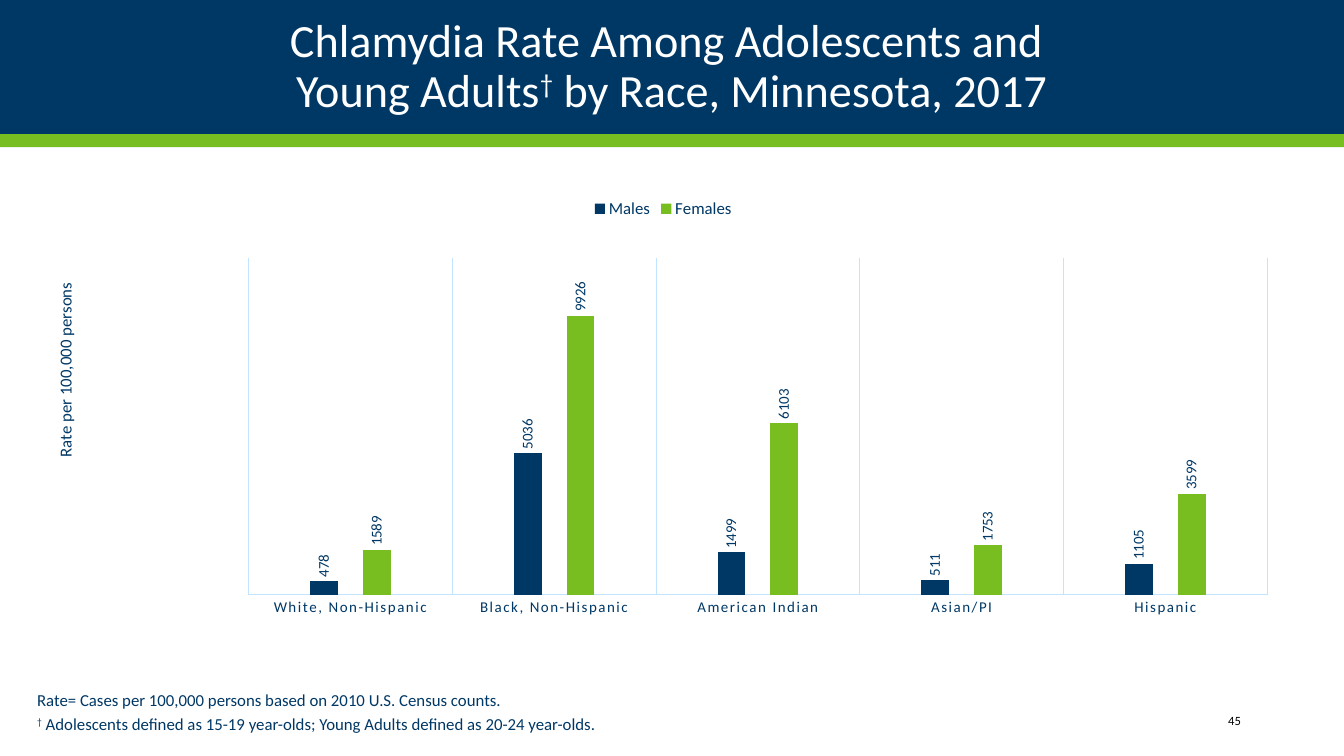
from lxml import etree
from pptx import Presentation
from pptx.chart.data import CategoryChartData
from pptx.dml.color import RGBColor
from pptx.enum.chart import XL_CHART_TYPE, XL_LABEL_POSITION, XL_LEGEND_POSITION, XL_TICK_MARK
from pptx.enum.shapes import MSO_SHAPE
from pptx.enum.text import MSO_ANCHOR, PP_ALIGN
from pptx.oxml.ns import qn
from pptx.util import Inches, Pt

NAVY, GREEN, PALE = "003865", "78BE21", "C2E4FF"
W, H = 40 / 3, 7.5
LABEL_SIZE = 10.64


def style(font, size, color):
    font.name, font.size = "Calibri", Pt(size)
    font.color.rgb = RGBColor.from_string(color)


def add_text(lines, at, size, color=NAVY, align=PP_ALIGN.LEFT, anchor=MSO_ANCHOR.TOP,
             spacing=1.0, before=0, inset=0.05):
    """Add one paragraph per line; every † is raised; before is a percentage of the line."""
    tf = slide.shapes.add_textbox(*map(Inches, at)).text_frame
    tf.word_wrap, tf.vertical_anchor = True, anchor
    tf.margin_top = tf.margin_bottom = Inches(inset)
    for i, line in enumerate(lines):
        p = tf.paragraphs[0] if i == 0 else tf.add_paragraph()
        p.alignment, p.line_spacing, p.space_before = align, spacing, Pt(0)
        gap = p._p.pPr.find(qn("a:spcBef"))
        gap.remove(gap[0])
        etree.SubElement(gap, qn("a:spcPct")).set("val", str(before * 1000))
        for j, row in enumerate(line.split("\n")):
            if j:
                p.add_line_break()
            for part in row.replace("†", "|†|").split("|"):
                if part:
                    r = p.add_run()
                    r.text = part
                    style(r.font, size, color)
                    if part == "†":
                        r.font._element.set("baseline", "30000")


prs = Presentation()
prs.slide_width, prs.slide_height = Inches(W), Inches(H)
slide = prs.slides.add_slide(prs.slide_layouts[6])

# Header bands and title
for top, height, color in [(0, 1.33, NAVY), (1.33, 0.13, GREEN)]:
    sp = slide.shapes.add_shape(MSO_SHAPE.RECTANGLE, 0, Inches(top), prs.slide_width, Inches(height))
    sp.shadow.inherit = False
    sp.fill.solid()
    sp.fill.fore_color.rgb = RGBColor.from_string(color)
    sp.line.fill.background()
add_text(["Chlamydia Rate Among Adolescents and \nYoung Adults† by Race, Minnesota, 2017"],
         (0.915, 0.17, 11.5, 1), 33, "FFFFFF", PP_ALIGN.CENTER, MSO_ANCHOR.MIDDLE, spacing=0.9)

# Chart
data = CategoryChartData()
data.categories = ["White, Non-Hispanic", "Black, Non-Hispanic", "American Indian", "Asian/PI", "Hispanic"]
data.add_series("Males", [478, 5036, 1499, 511, 1105])
data.add_series("Females", [1589, 9926, 6103, 1753, 3599])
chart = slide.shapes.add_chart(XL_CHART_TYPE.COLUMN_CLUSTERED,
                               *map(Inches, (0.41, 1.86, 12.34, 4.97)), data).chart
style(chart.font, 10, NAVY)
chart.has_title = False
chart.has_legend = True
chart.legend.position = XL_LEGEND_POSITION.TOP
chart.legend.include_in_layout = False
style(chart.legend.font, 12, NAVY)

plot = chart.plots[0]
plot.gap_width, plot.overlap, plot.vary_by_categories = 444, -90, False
for series, color in zip(plot.series, (NAVY, GREEN)):
    series.format.fill.solid()
    series.format.fill.fore_color.rgb = RGBColor.from_string(color)
    labels = series.data_labels
    labels.show_value, labels.position = True, XL_LABEL_POSITION.OUTSIDE_END
    style(labels.font, LABEL_SIZE, NAVY)

cat = chart.category_axis
cat.major_tick_mark = cat.minor_tick_mark = XL_TICK_MARK.NONE
cat.has_major_gridlines = True
style(cat.tick_labels.font, LABEL_SIZE, NAVY)
for line in (cat.format.line, cat.major_gridlines.format.line):
    line.color.rgb = RGBColor.from_string(PALE)
    line.width = Pt(0.75)

val = chart.value_axis
val.minimum_scale, val.maximum_scale = 0, 12000
val.has_major_gridlines = val.visible = False
val.has_title = True
p = val.axis_title.text_frame.paragraphs[0]
r = p.add_run()
r.text = "Rate per 100,000 persons"
style(r.font, 12, NAVY)
r.font.bold = False

# Upright labels, letter spacing and fixed layout
cs = chart._chartSpace
for body in cs.xpath(".//c:dLbls/c:txPr/a:bodyPr | .//c:valAx/c:title//a:bodyPr"):
    body.set("rot", "-5400000")
    body.set("vert", "horz")
for props in cs.xpath(".//c:catAx/c:txPr//a:defRPr"):
    props.set("spc", "120")
area = cs.xpath(".//c:plotArea")[0]
title = cs.xpath(".//c:valAx/c:title")[0]
frames = [
    (area, 0, dict(layoutTarget="inner", xMode="edge", yMode="edge", x=0.1666, y=0.14, w=0.819, h=0.673)),
    (title, 1, dict(xMode="edge", yMode="edge", x=0.0076, y=0.184)),
]
for parent, index, values in frames:
    for old in parent.findall(qn("c:layout")):
        parent.remove(old)
    layout = etree.Element(qn("c:layout"))
    manual = etree.SubElement(layout, qn("c:manualLayout"))
    for key, value in values.items():
        etree.SubElement(manual, qn("c:" + key)).set("val", str(value))
    parent.insert(index, layout)

# Footer
add_text(["45"], (10.81, 6.95, 1.6, 0.4), 9, "000000", PP_ALIGN.RIGHT, MSO_ANCHOR.MIDDLE)
add_text(["Rate= Cases per 100,000 persons based on 2010 U.S. Census counts.",
          "† Adolescents defined as 15-19 year-olds; Young Adults defined as 20-24 year-olds."],
         (0.27, 6.78, 7, 0.63), 12, spacing=0.8, before=50, inset=0.1)

prs.save("out.pptx")
